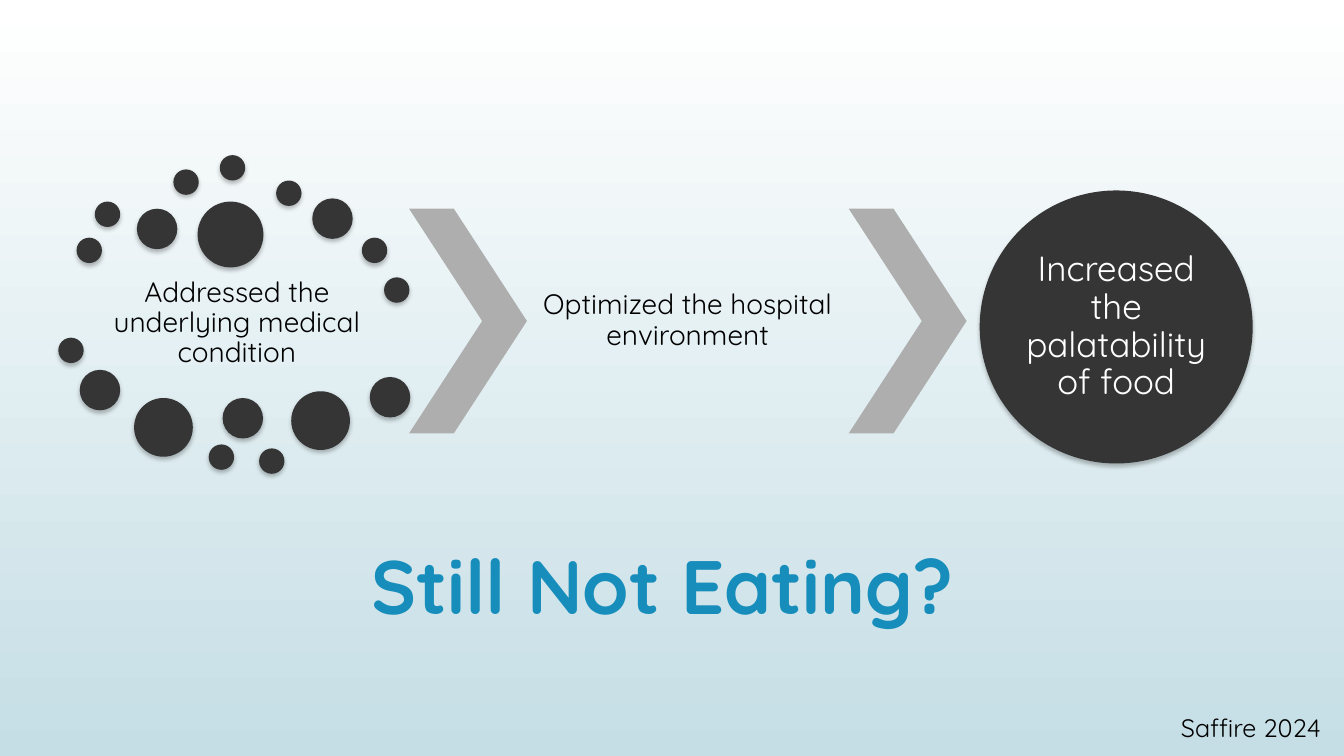
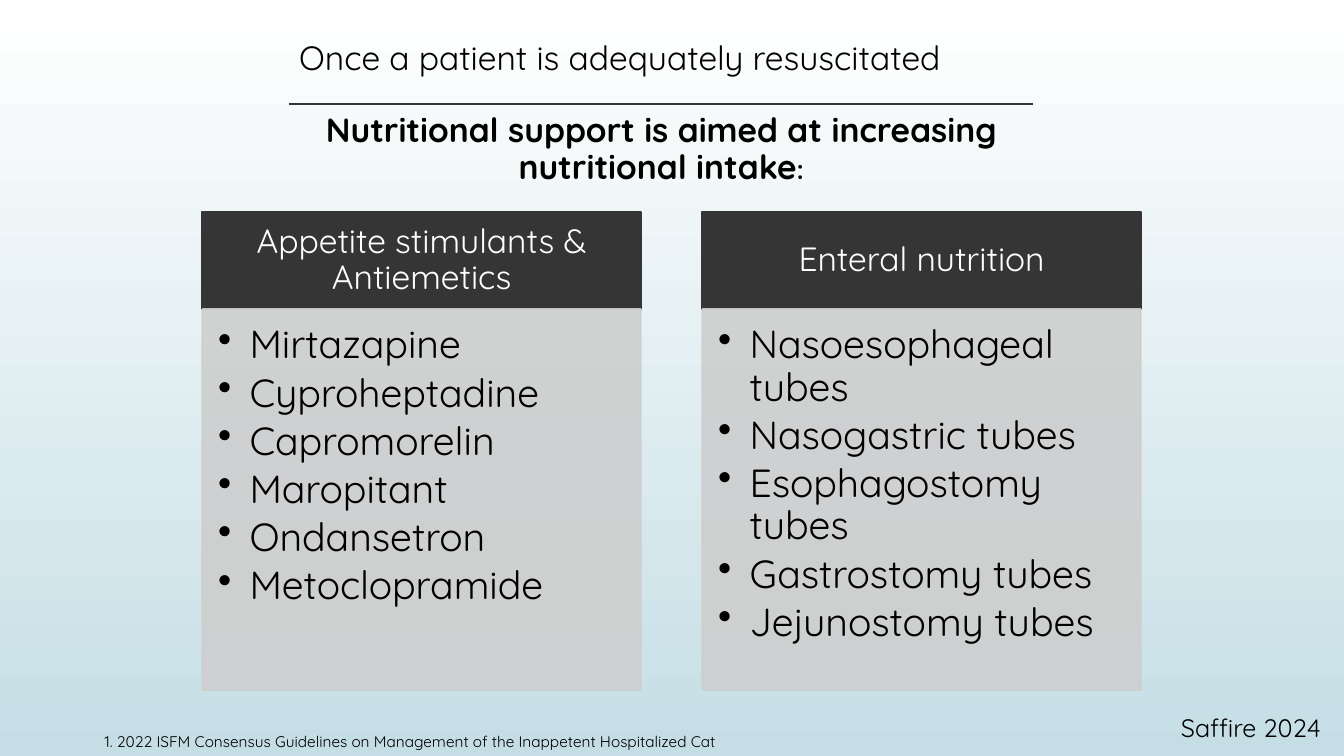
from lxml import etree
from pptx import Presentation, util as u
from pptx.dml.color import RGBColor
from pptx.enum import shapes, text
from pptx.oxml.ns import qn

COLORS = {
    "sky": "C5DEE5",
    "white": "FFFFFF",
    "black": "000000",
    "dark": "353535",
    "chevron": "AEAEAE",
    "panel": "CECECE",
    "title": "178DBB",
}
FONT = "Quicksand"
CENTER = text.PP_ALIGN.CENTER
MIDDLE = text.MSO_ANCHOR.MIDDLE
SHAPE = shapes.MSO_SHAPE


def rgb(name):
    return RGBColor.from_string(COLORS[name])


class Slides:
    def __init__(self):
        self.deck = Presentation()
        self.deck.slide_width = u.Cm(33.87)
        self.deck.slide_height = u.Cm(19.05)
        self.page = None

    def new_page(self):
        self.page = self.deck.slides.add_slide(self.deck.slide_layouts[6])
        fill = self.page.background.fill
        fill.gradient()
        fill.gradient_angle = 270
        for stop, name in zip(fill.gradient_stops, ("white", "sky")):
            stop.color.rgb = rgb(name)

    def footer(self):
        self.label((29.51, 17.81, 4.34, 1.02), "Saffire 2024", 18)

    def set_text(self, box, lines, size, color="black", bold=False, align=None,
                 anchor=None, spacing=1, inset=(0.25, 0.13, 0.25, 0.13), after=0):
        frame = box.text_frame
        frame.word_wrap = True
        frame.vertical_anchor = anchor or text.MSO_ANCHOR.TOP
        (frame.margin_left, frame.margin_top,
         frame.margin_right, frame.margin_bottom) = map(u.Cm, inset)
        frame.text = lines
        for para in frame.paragraphs:
            para.alignment = align or text.PP_ALIGN.LEFT
            para.line_spacing = spacing
            para.space_after = u.Pt(after)
            for span in para.runs:
                self.style(span, size, color, bold)

    def style(self, span, size, color="black", bold=False):
        span.font.name = FONT
        span.font.size = u.Pt(size)
        span.font.bold = bold
        span.font.color.rgb = rgb(color)

    def label(self, place, lines, size, **options):
        box = self.page.shapes.add_textbox(*map(u.Cm, place))
        self.set_text(box, lines, size, **options)
        return box

    def shape(self, kind, place, color, outline=False, shadow=False, alpha=None):
        box = self.page.shapes.add_shape(kind, *map(u.Cm, place))
        box.shadow.inherit = False
        box.fill.solid()
        box.fill.fore_color.rgb = rgb(color)
        if outline:
            box.line.color.rgb = rgb(color)
            box.line.width = u.Pt(1.25)
        else:
            box.line.fill.background()
        properties = box._element.spPr
        if alpha:
            for tint in properties.iter(qn("a:srgbClr")):
                self.opacity(tint, alpha)
        if shadow:
            effects = properties.find(qn("a:effectLst"))
            outer = etree.SubElement(
                effects, qn("a:outerShdw"), blurRad=str(u.Pt(3)),
                dist=str(u.Pt(2)), dir="5400000", rotWithShape="0")
            tint = etree.SubElement(outer, qn("a:srgbClr"), val=COLORS["black"])
            self.opacity(tint, 25)
        return box

    def opacity(self, tint, percent):
        etree.SubElement(tint, qn("a:alpha"), val=str(percent * 1000))

    def circle(self, left, top, size):
        return self.shape(SHAPE.OVAL, (left, top, size, size), "dark", shadow=True)

    def chevron(self, left):
        arrow = self.shape(SHAPE.CHEVRON, (left, 5.26, 2.97, 5.66), "chevron")
        arrow.adjustments[0] = 0.62

    def rule(self, left, top, width):
        line = self.page.shapes.add_connector(
            shapes.MSO_CONNECTOR.STRAIGHT,
            u.Cm(left), u.Cm(top), u.Cm(left + width), u.Cm(top))
        line.line.color.rgb = rgb("dark")
        line.line.width = u.Pt(1.25)
        etree.SubElement(line._element.spPr, qn("a:effectLst"))

    def panel(self, left, heading, items):
        width = 11.05
        header = self.shape(SHAPE.RECTANGLE, (left, 5.34, width, 2.45),
                            "dark", outline=True)
        self.set_text(header, heading, 24, "white", align=CENTER, anchor=MIDDLE,
                      spacing=0.9, inset=(0.48, 0.28, 0.48, 0.28))
        body = self.shape(SHAPE.RECTANGLE, (left, 7.79, width, 9.6),
                          "panel", outline=True, alpha=90)
        self.set_text(body, "\n".join(items), 28, spacing=0.9, after=4.2,
                      inset=(0.4, 0.4, 0.56, 0.6))
        for para in body.text_frame.paragraphs:
            settings = para._p.get_or_add_pPr()
            settings.set("marL", str(u.Cm(0.79)))
            settings.set("indent", str(-u.Cm(0.79)))
            etree.SubElement(settings, qn("a:buChar"), char="•")


DOTS = {
    0.64: [(1.93, 5.99), (2.39, 5.08), (4.37, 4.27), (5.54, 3.91), (6.96, 4.55),
           (9.12, 5.99), (9.68, 6.99), (1.47, 8.51), (5.26, 11.2), (6.53, 11.3)],
    1.02: [(3.45, 5.26), (7.87, 5), (2.01, 9.32), (5.61, 10.03), (9.32, 9.5)],
    1.48: [(3.38, 10.03), (7.34, 9.86)],
    1.66: [(4.98, 5.08)],
}

PANELS = {
    "Appetite stimulants & Antiemetics": [
        "Mirtazapine", "Cyproheptadine", "Capromorelin",
        "Maropitant", "Ondansetron", "Metoclopramide"],
    "Enteral nutrition": [
        "Nasoesophageal tubes", "Nasogastric tubes", "Esophagostomy tubes",
        "Gastrostomy tubes", "Jejunostomy tubes"],
}


def build_question(slides):
    slides.new_page()
    slides.label((4.75, 13.46, 23.88, 3.66), "Still Not Eating?", 54,
                 color="title", bold=True, align=CENTER)
    for size, places in DOTS.items():
        for left, top in places:
            slides.circle(left, top, size)
    steps = {
        "Addressed the underlying medical condition": (1.93, 6.81, 8.08, 2.67),
        "Optimized the hospital environment": (13.28, 5.26, 8.1, 5.66),
    }
    for step, place in steps.items():
        slides.label(place, step, 20, align=CENTER, anchor=MIDDLE,
                     spacing=0.9, inset=(0.08,) * 4)
    for left in (10.31, 21.39):
        slides.chevron(left)
    goal = slides.circle(24.69, 4.8, 6.88)
    slides.set_text(goal, "Increased the palatability of food", 25, "white",
                    align=CENTER, anchor=MIDDLE, spacing=0.9, inset=(0,) * 4)
    slides.footer()


def build_support(slides):
    slides.new_page()
    for index, (heading, items) in enumerate(PANELS.items()):
        slides.panel(5.1 + index * 12.6, heading, items)
    slides.rule(7.29, 2.62, 18.75)
    aim = slides.label(
        (7.29, 2.62, 18.75, 1.8),
        "Nutritional support is aimed at increasing nutritional intake", 24,
        bold=True, align=CENTER, spacing=0.9, inset=(0.25,) * 4)
    colon = aim.text_frame.paragraphs[0].add_run()
    colon.text = ":"
    slides.style(colon, 19, bold=True)
    slides.label((7.29, 0.79, 19.28, 1.27),
                 "Once a patient is adequately resuscitated", 24)
    slides.label((2.39, 18.31, 19.25, 0.74),
                 "1. 2022 ISFM Consensus Guidelines on Management of the "
                 "Inappetent Hospitalized Cat", 11)
    slides.footer()


def main():
    slides = Slides()
    build_question(slides)
    build_support(slides)
    slides.deck.save("out.pptx")


if __name__ == "__main__":
    main()
